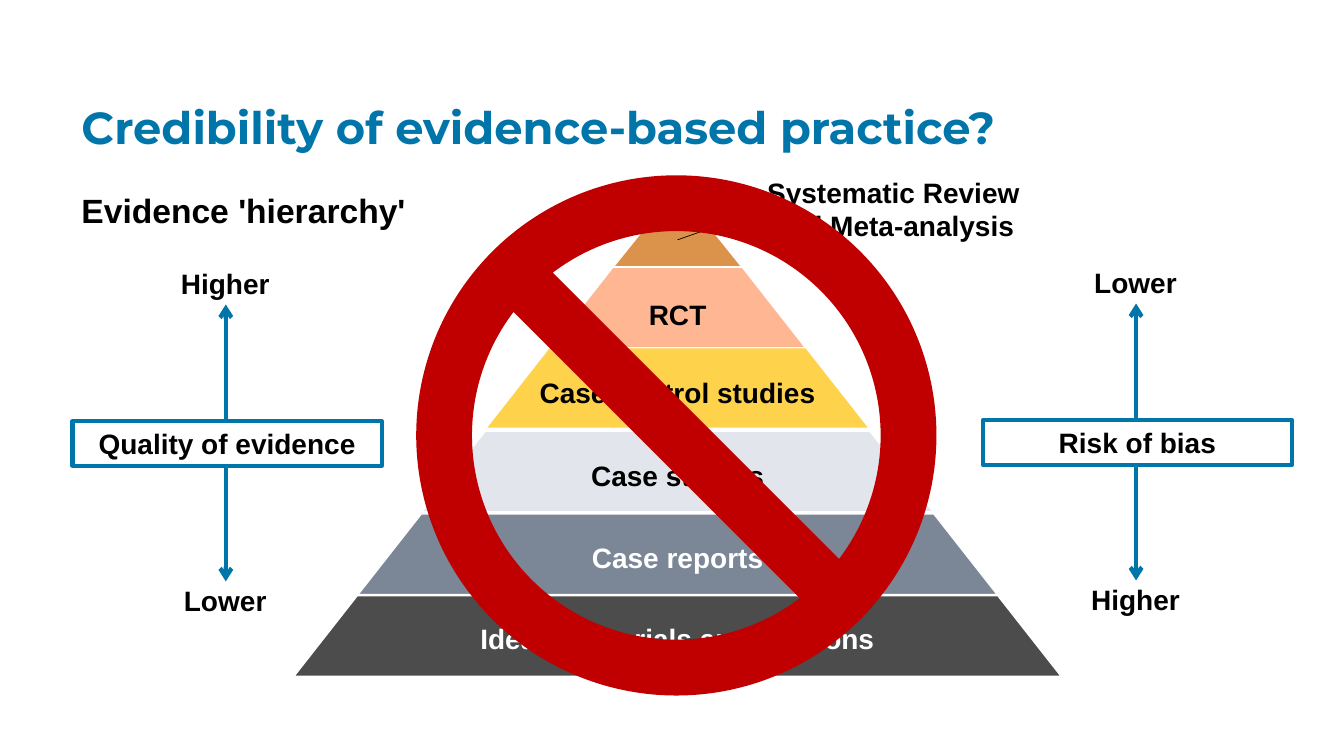
import dataclasses

import lxml.etree
import pptx
import pptx.dml.color
import pptx.enum.shapes
import pptx.enum.text
import pptx.oxml.ns
import pptx.util

Pt = pptx.util.Pt
Shape = pptx.enum.shapes.MSO_SHAPE
Align = pptx.enum.text.PP_ALIGN
Anchor = pptx.enum.text.MSO_ANCHOR


@dataclasses.dataclass(frozen=True)
class Theme:
    """Hold the colours, fonts and type sizes."""
    blue: str = "0075AA"
    black: str = "000000"
    white: str = "FFFFFF"
    red: str = "C00000"
    peak: str = "CC6600"
    tiers: tuple = ("FF9966", "FFC000", "D6DCE5", "44546A", "000000")
    head: str = "Montserrat"
    body: str = "Arial"
    big: int = 32
    mid: int = 24
    small: int = 20


theme = Theme()


def color(code):
    """Return a colour for a hex code."""
    return pptx.dml.color.RGBColor.from_string(code)


def add_sub(parent, tag, **attrs):
    """Append an element with attributes."""
    return lxml.etree.SubElement(parent, pptx.oxml.ns.qn(tag), **attrs)


def write(shape, text, size=theme.small, ink=theme.black, font=theme.body,
          align=Align.CENTER, anchor=Anchor.TOP, lead=None):
    """Write one bold run into a shape."""
    frame = shape.text_frame
    frame.word_wrap = True
    frame.vertical_anchor = anchor
    para = frame.paragraphs[0]
    para.alignment = align
    if lead:
        para.line_spacing = lead
    run = para.add_run()
    run.text = text
    run.font.name = font
    run.font.size = Pt(size)
    run.font.bold = True
    run.font.color.rgb = color(ink)
    return frame


def add_text(slide, box, text, **style):
    """Place a text box."""
    write(slide.shapes.add_textbox(*map(Pt, box)), text, **style)


def add_form(slide, kind, box, fill, edge=None, width=3, alpha=None):
    """Place a filled preset shape."""
    shape = slide.shapes.add_shape(kind, *map(Pt, box))
    shape.shadow.inherit = False
    shape.fill.solid()
    shape.fill.fore_color.rgb = color(fill)
    if alpha:
        tint = shape._element.spPr.find(".//" + pptx.oxml.ns.qn("a:srgbClr"))
        add_sub(tint, "a:alpha", val=str(alpha * 1000))
    if edge:
        shape.line.color.rgb = color(edge)
        shape.line.width = Pt(width)
    else:
        shape.line.fill.background()
    return shape


def add_line(slide, ends, ink, width, arrows=False):
    """Draw a line, with arrowheads if asked."""
    kind = pptx.enum.shapes.MSO_CONNECTOR.STRAIGHT
    line = slide.shapes.add_connector(kind, *map(Pt, ends))
    line.line.color.rgb = color(ink)
    line.line.width = Pt(width)
    if arrows:
        for tag in ("a:headEnd", "a:tailEnd"):
            add_sub(line.line._get_or_add_ln(), tag, type="arrow")
    add_sub(line._element.spPr, "a:effectLst")


def draw_heads(slide, box):
    """Write the title and subtitle."""
    x, y, w, h = box
    add_text(slide, (x, y, w, 50), "Credibility of evidence-based practice?",
             size=theme.big, ink=theme.blue, font=theme.head,
             align=Align.LEFT, lead=0.9)
    add_text(slide, (x, y + 63.4, 300, h - 63.4), "Evidence 'hierarchy'",
             size=theme.mid, align=Align.LEFT, lead=0.9)


def draw_scale(slide, box, top, label, low):
    """Draw a labelled vertical scale."""
    x, y, w, h = box
    row = 31.7
    mid = x + w / 2 + 0.4
    add_line(slide, (mid, y + h - row + 2, mid, y + 31), theme.blue, 3, True)
    plate = add_form(slide, Shape.RECTANGLE, (x + 1.4, y + 114.5, w, row),
                     theme.white, theme.blue)
    write(plate, label)
    add_text(slide, (x, y, w, row), top)
    add_text(slide, (x, y + h - row, w, row), low)


def draw_tiers(slide, box):
    """Draw the evidence pyramid and its callout."""
    x, y, w, h = box
    mid = x + w / 2
    add_form(slide, Shape.ISOSCELES_TRIANGLE, (mid - 44.6, y, 89.2, 55.4),
             theme.peak, alpha=70)
    names = ("RCT", "Case control studies", "Case studies", "Case reports",
             "Ideas, editorials and opinions")
    tops = (56.2, 113.8, 173.5, 232.6, 290.9)
    for i, (name, top, fill) in enumerate(zip(names, tops, theme.tiers)):
        wide = w - 91.3 * (len(names) - 1 - i)
        tier = add_form(slide, Shape.TRAPEZOID,
                        (mid - wide / 2, y + top, wide, h - tops[-1]),
                        fill, theme.white, 1, 70)
        tier.adjustments[0] = 0.785
        ink = theme.white if i > 2 else theme.black
        frame = write(tier, name, ink=ink, anchor=Anchor.MIDDLE)
        frame.margin_left = frame.margin_right = 0
    add_text(slide, (mid + 39, y - 13, 230.4, 55.4),
             "Systematic Review and Meta-analysis")
    add_line(slide, (mid, y + 36.7, mid + 59.8, y + 15.8), theme.black, 0.5)


def draw_ban(slide, box):
    """Draw the prohibition sign."""
    sign = add_form(slide, Shape.NO_SYMBOL, box, theme.red, theme.red)
    sign.adjustments[0] = 0.1


def main():
    """Build and save the slide."""
    deck = pptx.Presentation()
    deck.slide_width, deck.slide_height = Pt(960), Pt(540)
    slide = deck.slides.add_slide(deck.slide_layouts[6])
    draw_scale(slide, (50.4, 186.5, 221, 258.5),
               "Higher", "Quality of evidence", "Lower")
    draw_scale(slide, (700.6, 185.8, 221, 258.5),
               "Lower", "Risk of bias", "Higher")
    draw_tiers(slide, (210, 134.6, 548, 348.5))
    draw_heads(slide, (51.1, 71.8, 828, 110))
    draw_ban(slide, (298.8, 126.7, 368.6, 368.6))
    deck.save("out.pptx")


if __name__ == "__main__":
    main()
